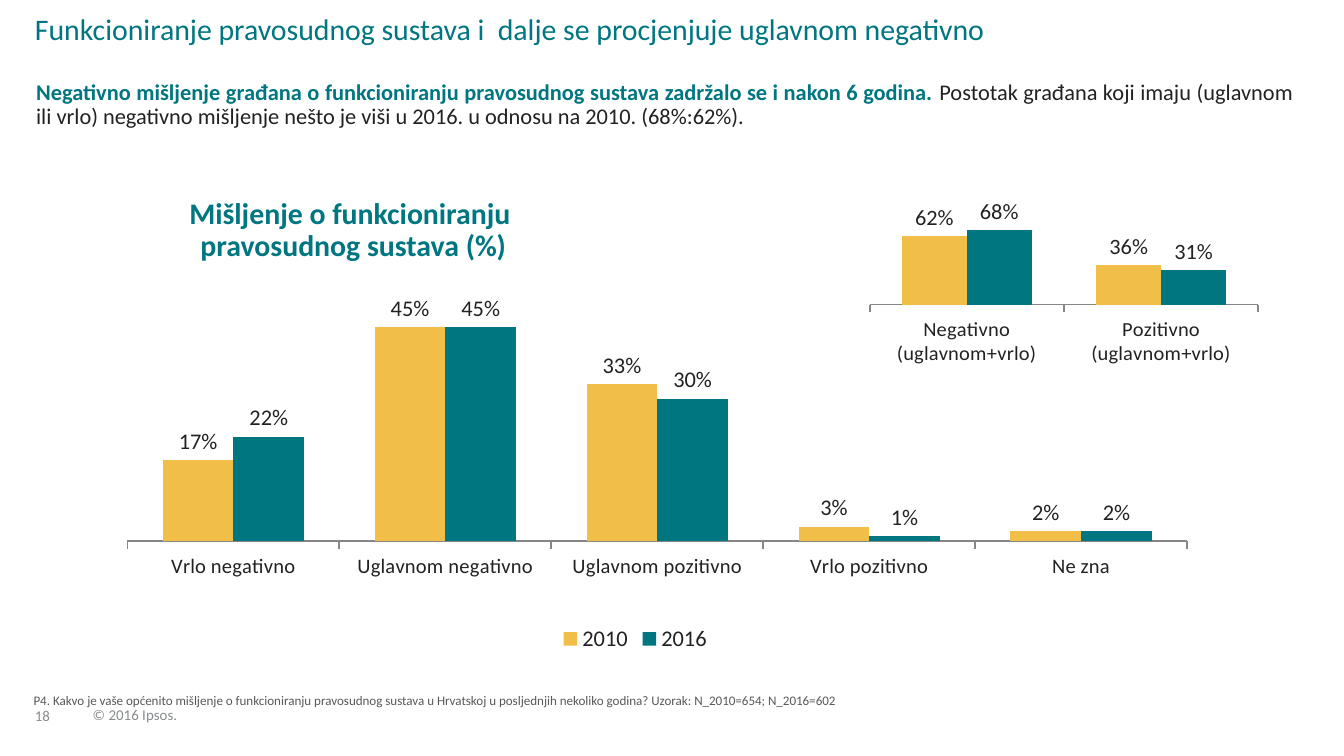
from lxml import etree
from pptx import Presentation
from pptx.chart.data import CategoryChartData
from pptx.dml.color import RGBColor
from pptx.enum.chart import XL_CHART_TYPE, XL_LABEL_POSITION, XL_LEGEND_POSITION, XL_TICK_MARK
from pptx.enum.text import MSO_ANCHOR, PP_ALIGN
from pptx.oxml.ns import qn
from pptx.util import Inches, Pt

COLUMNS = XL_CHART_TYPE.COLUMN_CLUSTERED
OUTSIDE_END = XL_LABEL_POSITION.OUTSIDE_END
LEGEND_BOTTOM = XL_LEGEND_POSITION.BOTTOM
TICK_OUT, TICK_NONE = XL_TICK_MARK.OUTSIDE, XL_TICK_MARK.NONE
TOP, BOTTOM = MSO_ANCHOR.TOP, MSO_ANCHOR.BOTTOM
LEFT, CENTER, JUSTIFY = PP_ALIGN.LEFT, PP_ALIGN.CENTER, PP_ALIGN.JUSTIFY

FONT = "Calibri"
COLORS = {
    "teal": "007681",
    "yellow": "F1BE48",
    "ink": "222223",
    "note": "58595B",
    "footer": "888B8D",
    "axis": "868686",
}
RGB = {name: RGBColor.from_string(value) for name, value in COLORS.items()}

presentation = Presentation()
presentation.slide_width = Inches(10)
presentation.slide_height = presentation.slide_width * 9 // 16
column = presentation.slide_width / 100
row = presentation.slide_height / 100
slide = presentation.slides.add_slide(presentation.slide_layouts[5])


def set_text(shape, box, paragraphs, size, anchor=TOP, align=LEFT, spacing=0.9, insets=(0, 0), wrap=True):
    left, top, width, height = box
    shape.left, shape.top = round(left * column), round(top * row)
    shape.width, shape.height = round(width * column), round(height * row)
    frame = shape.text_frame
    frame.word_wrap = wrap
    frame.vertical_anchor = anchor
    frame.margin_left = frame.margin_right = Inches(insets[0])
    frame.margin_top = frame.margin_bottom = Inches(insets[1])
    for index, runs in enumerate(paragraphs):
        paragraph = frame.add_paragraph() if index else frame.paragraphs[0]
        paragraph.alignment = align
        paragraph.line_spacing = spacing
        for text, color, bold in runs:
            run = paragraph.add_run()
            run.text = text
            run.font.name = FONT
            run.font.size = Pt(size)
            run.font.bold = bold
            run.font.color.rgb = RGB[color]


def add_column_chart(box, plot_area, maximum, categories, series_values):
    data = CategoryChartData(number_format="0%")
    data.categories = categories
    for name, values in series_values.items():
        data.add_series(name, values)
    left, top, width, height = box
    chart = slide.shapes.add_chart(
        COLUMNS, round(left * column), round(top * row), round(width * column), round(height * row), data
    ).chart
    chart.has_title = False
    chart.has_legend = False
    chart.font.name = FONT
    chart.font.size = Pt(18)
    chart.font.color.rgb = RGB["ink"]

    chart.value_axis.minimum_scale = 0
    chart.value_axis.maximum_scale = maximum
    chart.value_axis.has_major_gridlines = False
    chart.value_axis.visible = False
    axis = chart.category_axis
    axis.major_tick_mark = TICK_OUT
    axis.minor_tick_mark = TICK_NONE
    axis.tick_labels.font.size = Pt(11)
    axis.format.line.color.rgb = RGB["axis"]
    axis.format.line.width = Pt(1)

    plot = chart.plots[0]
    plot.gap_width = 100
    plot.overlap = 0
    plot.vary_by_categories = False
    for series, color in zip(plot.series, ("yellow", "teal")):
        series.format.fill.solid()
        series.format.fill.fore_color.rgb = RGB[color]
        series.invert_if_negative = False
        labels = series.data_labels
        labels.show_value = True
        labels.number_format = "0%"
        labels.number_format_is_linked = False
        labels.position = OUTSIDE_END
        labels.font.name = FONT
        labels.font.size = Pt(12)
        labels.font.color.rgb = RGB["ink"]

    area = plot._element.getparent()
    for layout in area.findall(qn("c:layout")):
        area.remove(layout)
    layout = etree.Element(qn("c:layout"))
    manual = etree.SubElement(layout, qn("c:manualLayout"))
    settings = zip(("layoutTarget", "xMode", "yMode", "x", "y", "w", "h"), ("inner", "edge", "edge", *plot_area))
    for tag, value in settings:
        etree.SubElement(manual, qn("c:" + tag)).set("val", str(value))
    area.insert(0, layout)
    return chart


set_text(
    slide.shapes.title,
    (2.6, 2, 77.6, 4.3),
    [[("Funkcioniranje pravosudnog sustava i  dalje se procjenjuje uglavnom negativno", "teal", False)]],
    16,
)

summary = [
    ("Negativno mišljenje građana o funkcioniranju pravosudnog sustava zadržalo se i nakon 6 godina. ", "teal", True),
    (
        "Postotak građana koji imaju (uglavnom ili vrlo) negativno mišljenje nešto je viši u 2016. "
        "u odnosu na 2010. (68%:62%).",
        "ink",
        False,
    ),
]
chart_heading = [
    [("Mišljenje o funkcioniranju ", "teal", True)],
    [("pravosudnog sustava (%)", "teal", True)],
]
question = (
    "P4. Kakvo je vaše općenito mišljenje o funkcioniranju pravosudnog sustava u Hrvatskoj "
    "u posljednjih nekoliko godina? Uzorak: N_2010=654; N_2016=602"
)
text_boxes = [
    ((1.7, 9.9, 95.5, 8.2), [summary], 12, TOP, JUSTIFY, 0.9, (0.1, 0.05), True),
    ((4, 26.3, 44.6, 9.1), chart_heading, 16, TOP, CENTER, 0.9, (0, 0), True),
    ((2.5, 90.1, 79.3, 3.6), [[(question, "note", False)]], 7, BOTTOM, LEFT, 1.0, (0, 0), True),
    ((2.6, 91.2, 3.4, 4.6), [[("18", "footer", False)]], 8, BOTTOM, LEFT, 0.85, (0, 0), False),
    ((6.9, 92.5, 7.6, 3.2), [[("© 2016 Ipsos.", "footer", False)]], 8, BOTTOM, LEFT, 0.85, (0, 0), False),
]
for box, *text in text_boxes:
    set_text(slide.shapes.add_textbox(0, 0, 0, 0), box, *text)

opinion_chart = add_column_chart(
    (6.2, 33.8, 82.2, 53.2),
    (0.04, 0.12, 0.96, 0.59),
    0.5,
    ["Vrlo negativno", "Uglavnom negativno", "Uglavnom pozitivno", "Vrlo pozitivno", "Ne zna"],
    {"2010": (0.17, 0.45, 0.33, 0.03, 0.02), "2016": (0.22, 0.45, 0.30, 0.01, 0.02)},
)
opinion_chart.has_legend = True
opinion_chart.legend.position = LEGEND_BOTTOM
opinion_chart.legend.include_in_layout = False
opinion_chart.legend.font.name = FONT
opinion_chart.legend.font.size = Pt(12)
opinion_chart.legend.font.color.rgb = RGB["ink"]

add_column_chart(
    (63.5, 26.3, 30.2, 22.2),
    (0.04, 0, 0.96, 0.62),
    0.92,
    ["Negativno (uglavnom+vrlo)", "Pozitivno (uglavnom+vrlo)"],
    {"Series 1": (0.62, 0.36), "Series 2": (0.68, 0.31)},
)

presentation.save("out.pptx")
